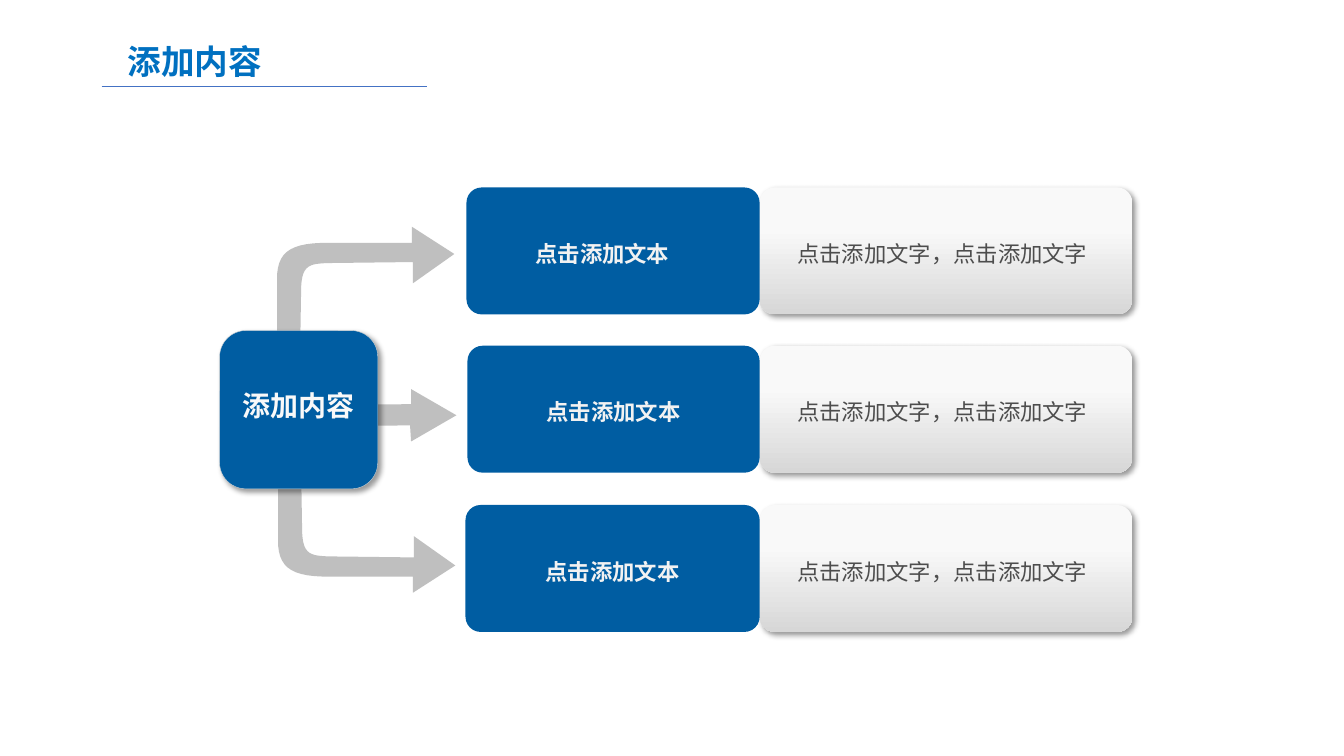
"""Build a slide where one topic branches through arrows into three rows of text."""
from lxml.etree import SubElement
from pptx import Presentation
from pptx.dml.color import RGBColor
from pptx.enum.shapes import MSO_CONNECTOR, MSO_SHAPE
from pptx.enum.text import MSO_ANCHOR, PP_ALIGN
from pptx.oxml import parse_xml
from pptx.oxml.ns import nsdecls, qn
from pptx.util import Inches, Pt

FONT = "Noto Sans CJK SC"
BLUE = "005DA2"
SHADOW = (
    f'<a:outerShdw {nsdecls("a")} blurRad="50800" dist="38100" dir="2700000" algn="tl" '
    'rotWithShape="0"><a:srgbClr val="000000"><a:alpha val="40000"/></a:srgbClr></a:outerShdw>'
)


def color(value):
    return RGBColor.from_string(value)


def write(shape, text, size, fill, bold=False, align=PP_ALIGN.CENTER, spacing=1.2,
          insets=(0.1, 0.05, 0.1, 0.05), wrap=True, anchor=MSO_ANCHOR.MIDDLE):
    frame = shape.text_frame
    frame.word_wrap = wrap
    frame.vertical_anchor = anchor
    frame.margin_left, frame.margin_top, frame.margin_right, frame.margin_bottom = map(Inches, insets)
    paragraph = frame.paragraphs[0]
    paragraph.alignment = align
    paragraph.line_spacing = spacing
    run = paragraph.add_run()
    run.text = text
    run.font.name = FONT
    run.font.size = Pt(size)
    run.font.bold = bold
    run.font.color.rgb = color(fill)
    SubElement(run.font._element, qn("a:ea")).set("typeface", FONT)


presentation = Presentation()
presentation.slide_width = Inches(13.34)
presentation.slide_height = Inches(7.5)
slide = presentation.slides.add_slide(presentation.slide_layouts[6])
shapes = slide.shapes

title_rule = shapes.add_connector(
    MSO_CONNECTOR.STRAIGHT, Inches(1.01), Inches(0.86), Inches(4.24), Inches(0.86))
title_rule.line.color.rgb = color("4472C4")
title_rule.line.width = Pt(0.5)
SubElement(title_rule._element.spPr, qn("a:effectLst"))

bent_path = [
    [(2.97, 4.06)], [(2.99, 2.84)],
    [(3, 2.62), (3.09, 2.62), (3.24, 2.61)],
    [(4.1, 2.6)], [(4.1, 2.81)], [(4.51, 2.52)], [(4.09, 2.25)], [(4.09, 2.41)],
    [(4.09, 2.41), (3.51, 2.41), (3.19, 2.41)],
    [(2.86, 2.42), (2.75, 2.52), (2.75, 2.77)],
    [(2.75, 4.09)],
    [(2.78, 4.3), (2.92, 4.28), (2.97, 4.06)],
]
up_arrow = []
for step in bent_path:
    if len(step) == 1:
        up_arrow += step
        continue
    curve = [up_arrow[-1], *step]
    for t in [n / 12 for n in range(1, 13)]:
        weights = ((1 - t) ** 3, 3 * t * (1 - t) ** 2, 3 * t ** 2 * (1 - t), t ** 3)
        up_arrow.append(tuple(sum(w * p[axis] for w, p in zip(weights, curve)) for axis in (0, 1)))
down_arrow = [(x + 0.01, 8.13 - y) for x, y in up_arrow]
middle_arrow = [(2.44, 4.24), (4.07, 4.22), (4.08, 4.38), (4.53, 4.12),
                (4.08, 3.86), (4.08, 4.01), (2.44, 4.02)]

for outline in (down_arrow, middle_arrow, up_arrow):
    points = [(Inches(x), Inches(y)) for x, y in outline]
    builder = shapes.build_freeform(*points[0])
    builder.add_line_segments(points[1:], close=True)
    arrow = builder.convert_to_shape()
    arrow.shadow.inherit = False
    arrow.fill.solid()
    arrow.fill.fore_color.rgb = color("BFBFBF")
    arrow.line.fill.background()

rows = [
    (1.86, 4.63, PP_ALIGN.LEFT, 0.64),
    (3.43, 4.64, PP_ALIGN.CENTER, 0.1),
    (5.01, 4.62, PP_ALIGN.CENTER, 0.1),
]
for top, left, align, indent in rows:
    detail = shapes.add_shape(
        MSO_SHAPE.ROUNDED_RECTANGLE, Inches(7.54), Inches(top), Inches(3.7), Inches(1.26))
    detail.adjustments[0] = 0.12
    detail.fill.gradient()
    detail.fill.gradient_angle = 270
    for stop, (position, shade) in zip(detail.fill.gradient_stops, [(0.33, "F9F9F9"), (1, "D7D7D7")]):
        stop.position = position
        stop.color.rgb = color(shade)
    detail.line.fill.background()
    detail.shadow.inherit = False
    detail._element.spPr.find(qn("a:effectLst")).append(parse_xml(SHADOW))
    write(detail, "点击添加文字，点击添加文字", 16, "4D4D4D", align=PP_ALIGN.LEFT,
          insets=(0.33, 0.05, 0.1, 0.05))

    label = shapes.add_shape(
        MSO_SHAPE.ROUNDED_RECTANGLE, Inches(left), Inches(top), Inches(7.54 - left), Inches(1.26))
    label.adjustments[0] = 0.12
    label.fill.solid()
    label.fill.fore_color.rgb = color(BLUE)
    label.line.fill.background()
    label.shadow.inherit = False
    write(label, "点击添加文本", 16, "F2F2F2", bold=True, align=align,
          insets=(indent, 0.05, 0.1, 0.05))

topic = shapes.add_shape(
    MSO_SHAPE.ROUNDED_RECTANGLE, Inches(2.18), Inches(3.28), Inches(1.57), Inches(1.57))
topic.fill.solid()
topic.fill.fore_color.rgb = color(BLUE)
topic.line.color.rgb = color("D7D7D7")
topic.line.width = Pt(0.25)
topic.shadow.inherit = False
topic._element.spPr.find(qn("a:effectLst")).append(parse_xml(SHADOW))
write(topic, "添加内容", 20, "F9F9F9", bold=True, insets=(0.14, 0.05, 0.14, 0.2))

title = shapes.add_textbox(Inches(1.16), Inches(0.36), Inches(1.55), Inches(0.5))
write(title, "添加内容", 24, "0070C0", bold=True, spacing=1.0, wrap=False, anchor=MSO_ANCHOR.TOP)

presentation.save("out.pptx")
